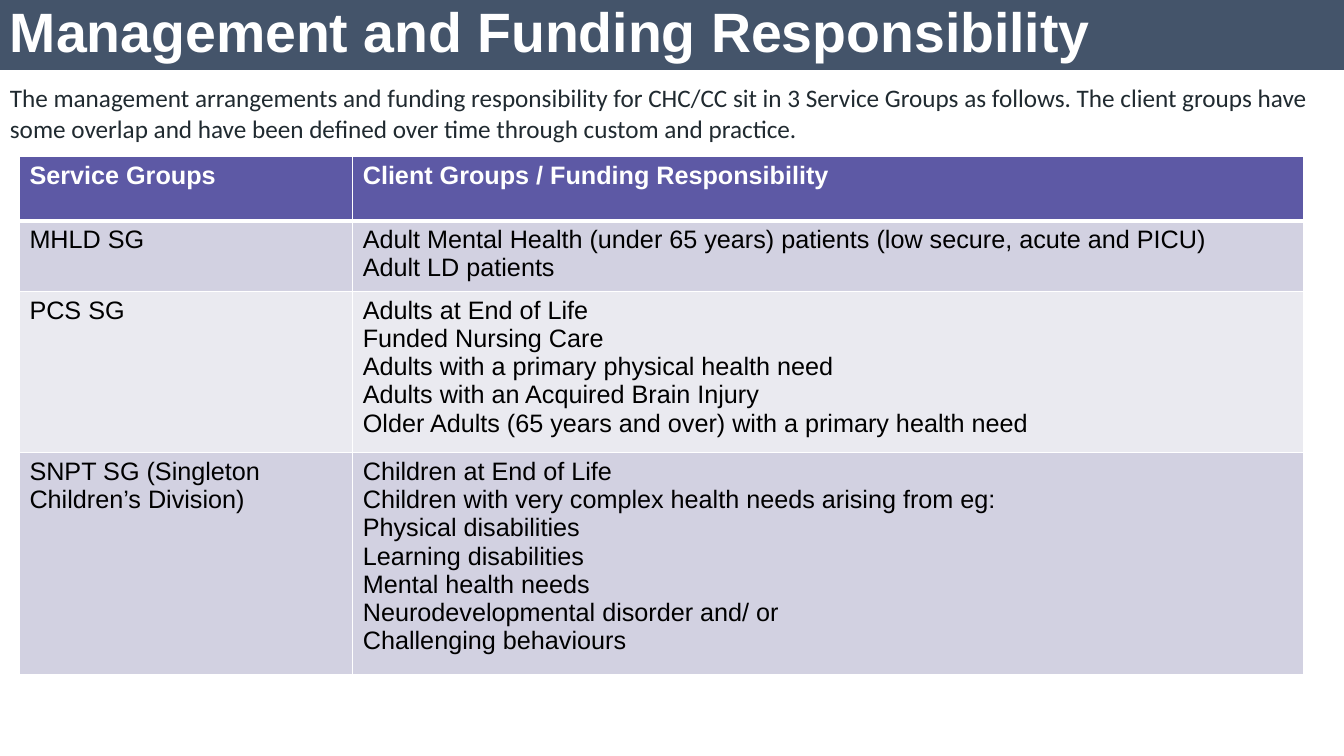
"""Builds a slide on management and funding responsibility by service group."""
from lxml import etree
from pptx import Presentation
from pptx.dml.color import RGBColor
from pptx.enum.shapes import MSO_SHAPE
from pptx.enum.text import MSO_ANCHOR
from pptx.oxml.ns import qn
from pptx.util import Cm, Pt

RECT = MSO_SHAPE.RECTANGLE
TOP, MIDDLE = MSO_ANCHOR.TOP, MSO_ANCHOR.MIDDLE

TITLE = "Management and Funding Responsibility"
INTRO = (
    "The management arrangements and funding responsibility for CHC/CC sit in "
    "3 Service Groups as follows. The client groups have some overlap and have "
    "been defined over time through custom and practice."
)
HEADER = ("Service Groups", ["Client Groups / Funding Responsibility"])
GROUPS = [
    ("MHLD SG", [
        "Adult Mental Health (under 65 years) patients (low secure, acute and PICU)",
        "Adult LD patients",
    ]),
    ("PCS SG", [
        "Adults at End of Life",
        "Funded Nursing Care",
        "Adults with a primary physical health need",
        "Adults with an Acquired Brain Injury",
        "Older Adults (65 years and over) with a primary health need",
    ]),
    ("SNPT SG (Singleton Children’s Division)", [
        "Children at End of Life",
        "Children with very complex health needs arising from eg:",
        "Physical disabilities",
        "Learning disabilities",
        "Mental health needs",
        "Neurodevelopmental disorder and/ or",
        "Challenging behaviours",
    ]),
]
COL_WIDTHS = (8.4, 23.97)
ROW_HEIGHTS = (1.62, 1.78, 4.06, 5.6)

THEME = {
    "banner": "44546A", "intro": "202A30", "header": "5D59A5",
    "bands": ("D2D1E1", "EAEAF0"), "white": "FFFFFF", "black": "000000",
    "title_size": 39.6, "body_size": 18,
    "font": "Arial", "intro_font": "Calibri",
    "rule": 1, "header_rule": 3,
}


def color(name):
    return RGBColor.from_string(name)


def write(tf, lines, font, size, ink, bold=False):
    tf.text = "\n".join(lines)
    for p in tf.paragraphs:
        for r in p.runs:
            r.font.name, r.font.size, r.font.bold = font, Pt(size), bold
            r.font.color.rgb = color(ink)


def add_text(s, box, text, font, size, ink, bold=False, anchor=TOP):
    tf = s.shapes.add_textbox(*map(Cm, box)).text_frame
    tf.word_wrap = True
    tf.vertical_anchor = anchor
    write(tf, [text], font, size, ink, bold)
    return tf


def set_borders(cell, top, bottom):
    tc_pr = cell._tc.get_or_add_tcPr()
    widths = {"lnL": THEME["rule"], "lnR": THEME["rule"], "lnT": top, "lnB": bottom}
    for side, width in widths.items():
        ln = etree.SubElement(tc_pr, qn(f"a:{side}"), w=str(Pt(width)))
        fill = etree.SubElement(ln, qn("a:solidFill"))
        etree.SubElement(fill, qn("a:srgbClr"), val=THEME["white"])


def add_groups_table(s, left, top):
    rows = [HEADER] + GROUPS
    size = (sum(COL_WIDTHS), sum(ROW_HEIGHTS))
    table = s.shapes.add_table(
        len(rows), len(COL_WIDTHS), *map(Cm, (left, top, *size))).table
    for column, width in zip(table.columns, COL_WIDTHS):
        column.width = Cm(width)
    for i, (group, clients) in enumerate(rows):
        table.rows[i].height = Cm(ROW_HEIGHTS[i])
        is_header = i == 0
        fill = THEME["header"] if is_header else THEME["bands"][(i - 1) % 2]
        ink = THEME["white"] if is_header else THEME["black"]
        upper = THEME["header_rule"] if i == 1 else THEME["rule"]
        lower = THEME["header_rule"] if is_header else THEME["rule"]
        for cell, lines in zip(table.rows[i].cells, ([group], clients)):
            set_borders(cell, upper, lower)
            cell.fill.solid()
            cell.fill.fore_color.rgb = color(fill)
            write(cell.text_frame, lines, THEME["font"], THEME["body_size"],
                  ink, is_header)


def main():
    prs = Presentation()
    prs.slide_width, prs.slide_height = Cm(33.87), Cm(19.05)
    s = prs.slides.add_slide(prs.slide_layouts[6])

    banner = s.shapes.add_shape(RECT, 0, 0, prs.slide_width, Cm(1.76))
    banner.shadow.inherit = False
    banner.fill.solid()
    banner.fill.fore_color.rgb = color(THEME["banner"])
    banner.line.fill.background()

    title = add_text(s, (0, 0, 29.2, 1.76), TITLE, THEME["font"],
                     THEME["title_size"], THEME["white"], True, MIDDLE)
    title.paragraphs[0].line_spacing = 0.9
    add_text(s, (0, 1.96, 33.35, 1.8), INTRO, THEME["intro_font"],
             THEME["body_size"], THEME["intro"])
    add_groups_table(s, 0.49, 3.94)
    prs.save("out.pptx")


if __name__ == "__main__":
    main()
